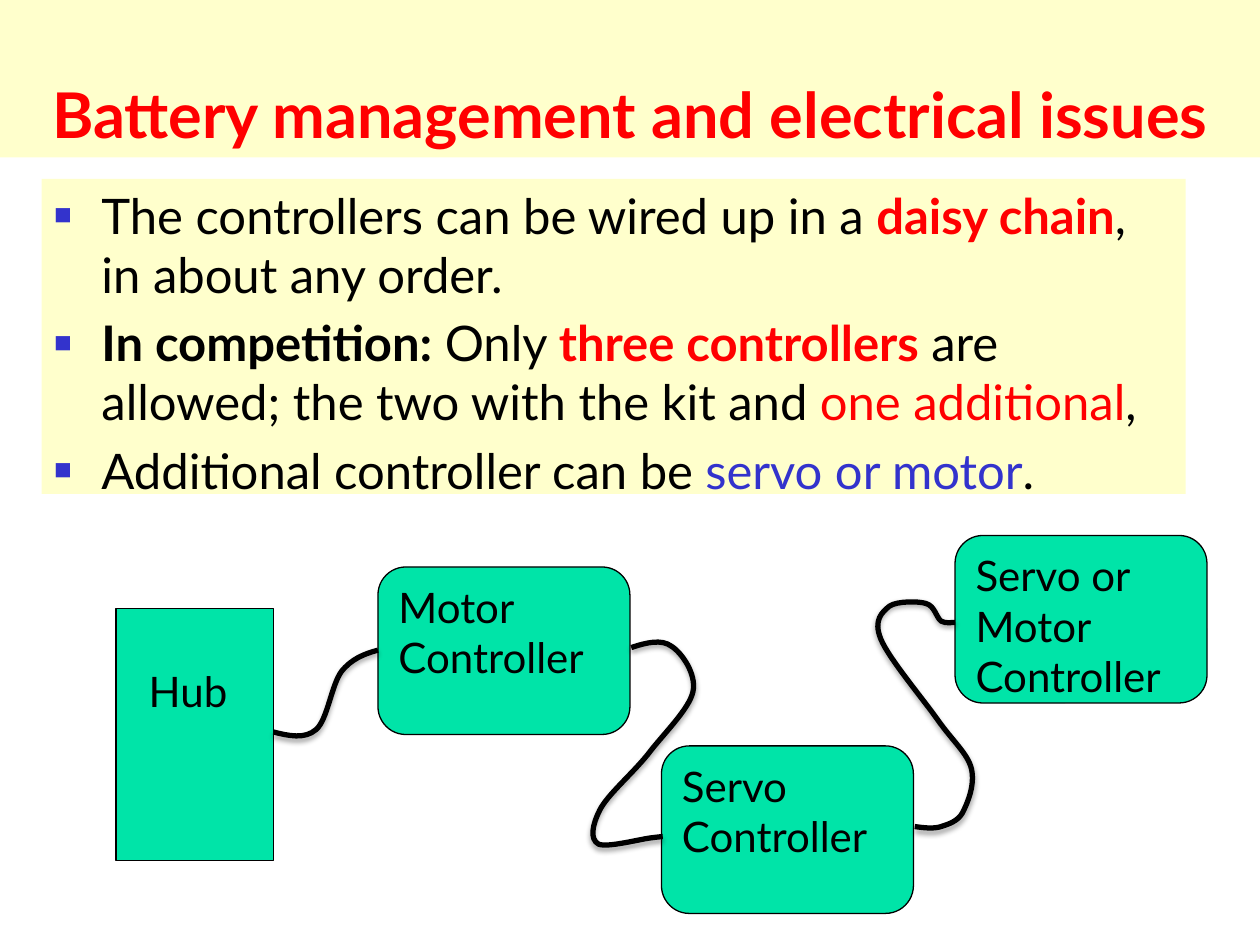
from dataclasses import dataclass

from lxml import etree
from pptx import Presentation
from pptx.dml.color import RGBColor
from pptx.enum import shapes, text
from pptx.oxml import ns
from pptx.util import Inches, Pt


@dataclass(frozen=True)
class Theme:
    font: str = "Lato"
    title_size: int = 36
    body_size: int = 28
    label_size: int = 24
    panel: str = "FFFFCC"
    ink: str = "000000"
    accent: str = "FF0000"
    blue: str = "3333CC"
    device: str = "00E4A8"
    outline: float = 0.75
    wire: float = 3


THEME = Theme()

TITLE = "Battery management and electrical issues"
POINTS = [
    [("The controllers can be wired up in a ", THEME.ink, False),
     ("daisy chain", THEME.accent, True),
     (", in about any order.", THEME.ink, False)],
    [("In competition:", THEME.ink, True),
     (" Only ", THEME.ink, False),
     ("three controllers", THEME.accent, True),
     (" are allowed; the two with the kit and ", THEME.ink, False),
     ("one additional", THEME.accent, False),
     (",", THEME.ink, False)],
    [("Additional controller can be ", THEME.ink, False),
     ("servo or motor", THEME.blue, False),
     (".", THEME.ink, False)],
]
CONTROLLERS = [
    (3, 0.5, ["Motor", "Controller"]),
    (5.25, 1.92, ["Servo", "Controller"]),
    (7.58, 0.25, ["Servo or", "Motor", "Controller"]),
]
HUB_TO_MOTOR = [
    (2.17, 1.81), (2.29, 1.84), (2.42, 1.87), (2.51, 1.79), (2.6, 1.71),
    (2.63, 1.44), (2.71, 1.33), (2.79, 1.23), (2.89, 1.19), (3, 1.16),
]
MOTOR_TO_SERVO = [
    (5.01, 1.14), (5.13, 1.1), (5.25, 1.07), (5.33, 1.13), (5.41, 1.18),
    (5.53, 1.35), (5.5, 1.49), (5.47, 1.63), (5.26, 1.83), (5.14, 1.99),
    (5.01, 2.15), (4.82, 2.31), (4.76, 2.43), (4.7, 2.55), (4.68, 2.66),
    (4.75, 2.7), (4.82, 2.73), (5.08, 2.66), (5.17, 2.65), (5.25, 2.64),
    (5.26, 2.64), (5.26, 2.64),
]
SERVO_TO_ADDITIONAL = [
    (7.26, 2.56), (7.33, 2.57), (7.41, 2.58), (7.47, 2.56), (7.53, 2.54),
    (7.6, 2.52), (7.64, 2.45), (7.68, 2.37), (7.74, 2.23), (7.71, 2.1),
    (7.68, 1.98), (7.56, 1.88), (7.44, 1.71), (7.32, 1.54), (7.05, 1.22),
    (6.99, 1.07), (6.93, 0.92), (7, 0.86), (7.06, 0.81), (7.12, 0.77),
    (7.29, 0.77), (7.35, 0.79), (7.42, 0.81), (7.43, 0.9), (7.47, 0.93),
    (7.51, 0.95), (7.55, 0.94), (7.58, 0.94),
]


def color(value):
    return RGBColor.from_string(value)


def add_child(parent, tag, **attributes):
    return etree.SubElement(parent, ns.qn(tag), attributes)


def add_run(paragraph, wording, size, ink=THEME.ink, bold=False):
    run = paragraph.add_run()
    run.text = wording
    run.font.name = THEME.font
    run.font.size = Pt(size)
    run.font.bold = bold
    run.font.color.rgb = color(ink)


def paragraphs(frame, count):
    return [frame.paragraphs[0]] + [frame.add_paragraph() for _ in range(count - 1)]


def place_panel(panel, box):
    panel.left, panel.top, panel.width, panel.height = box
    panel.fill.solid()
    panel.fill.fore_color.rgb = color(THEME.panel)
    panel.text_frame.word_wrap = True
    panel.text_frame.auto_size = text.MSO_AUTO_SIZE.NONE


def fill_title(title, box):
    place_panel(title, box)
    title.text_frame.vertical_anchor = text.MSO_ANCHOR.BOTTOM
    heading = title.text_frame.paragraphs[0]
    heading.alignment = text.PP_ALIGN.CENTER
    add_run(heading, TITLE, THEME.title_size, THEME.accent, True)


def fill_points(body, box):
    place_panel(body, box)
    for point, runs in zip(paragraphs(body.text_frame, len(POINTS)), POINTS):
        properties = point._p.get_or_add_pPr()
        add_child(add_child(properties, "a:buClr"), "a:srgbClr", val=THEME.blue)
        add_child(properties, "a:buSzPct", val="60000")
        add_child(properties, "a:buChar", char="■")
        for wording, ink, bold in runs:
            add_run(point, wording, THEME.body_size, ink, bold)


def add_device(slide, outline, box, lines):
    device = slide.shapes.add_shape(outline, *box)
    device.shadow.inherit = False
    device.fill.solid()
    device.fill.fore_color.rgb = color(THEME.device)
    device.line.color.rgb = color(THEME.ink)
    device.line.width = Pt(THEME.outline)
    frame = device.text_frame
    frame.word_wrap = False
    frame.vertical_anchor = text.MSO_ANCHOR.TOP
    for label, wording in zip(paragraphs(frame, len(lines)), lines):
        label.alignment = text.PP_ALIGN.LEFT
        add_run(label, wording, THEME.label_size)
    return device


def add_wire(slide, left, top, points):
    start, *rest = [(left + Inches(x), top + Inches(y)) for x, y in points]
    builder = slide.shapes.build_freeform(*start)
    builder.add_line_segments(rest, close=False)
    wire = builder.convert_to_shape()
    wire.fill.background()
    wire.line.color.rgb = color(THEME.ink)
    wire.line.width = Pt(THEME.wire)

    segments = wire._element.xpath(".//a:lnTo")
    for first in range(0, len(segments), 3):
        curve = etree.Element(ns.qn("a:cubicBezTo"))
        segments[first].addprevious(curve)
        for segment in segments[first:first + 3]:
            curve.append(segment[0])
            segment.getparent().remove(segment)

    wire.shadow.inherit = False
    effects = wire._element.spPr.find(ns.qn("a:effectLst"))
    shadow = add_child(effects, "a:outerShdw", blurRad=str(Pt(3.1)),
                       dist=str(Pt(1.8)), dir="5400000", rotWithShape="0")
    shade = add_child(shadow, "a:srgbClr", val=THEME.ink)
    add_child(shade, "a:alpha", val="35000")


def draw_daisy_chain(slide, box):
    left, top = box[:2]
    for x, y, lines in CONTROLLERS:
        place = (left + Inches(x), top + Inches(y), Inches(2), Inches(1.33))
        add_device(slide, shapes.MSO_SHAPE.ROUNDED_RECTANGLE, place, lines)
    place = (left + Inches(0.92), top + Inches(0.83), Inches(1.25), Inches(2))
    hub = add_device(slide, shapes.MSO_SHAPE.RECTANGLE, place, ["Hub"])
    hub.text_frame.margin_left = Inches(0.26)
    hub.text_frame.margin_top = Inches(0.45)
    for wire in (HUB_TO_MOTOR, MOTOR_TO_SERVO, SERVO_TO_ADDITIONAL):
        add_wire(slide, left, top, wire)


def main():
    deck = Presentation()
    deck.slide_width, deck.slide_height = Inches(10), Inches(7.5)
    slide = deck.slides.add_slide(deck.slide_layouts[1])
    fill_title(slide.shapes.title, (0, 0, Inches(10), Inches(1.25)))
    fill_points(slide.placeholders[1],
                (Inches(0.33), Inches(1.42), Inches(9.08), Inches(2.5)))
    draw_daisy_chain(slide, (0, Inches(4), Inches(10), Inches(3.5)))
    deck.save("out.pptx")


if __name__ == "__main__":
    main()
